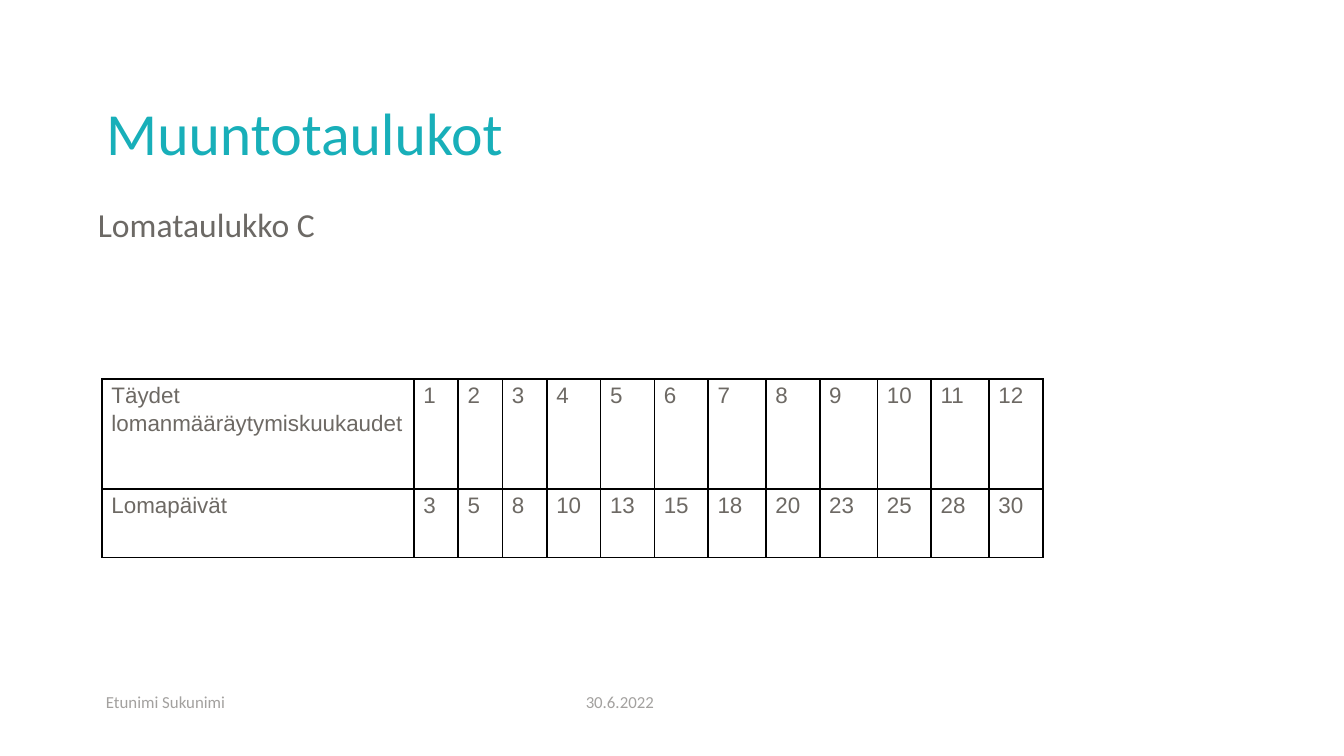
from lxml.etree import fromstring
from pptx import Presentation
from pptx.dml.color import RGBColor
from pptx.enum.text import MSO_ANCHOR, MSO_AUTO_SIZE, PP_ALIGN
from pptx.util import Inches, Pt

TEAL = RGBColor(0x18, 0xAF, 0xB9)
GREY = RGBColor(0x6C, 0x69, 0x65)
CELL = RGBColor(0x6D, 0x69, 0x64)
PALE = RGBColor(0xA3, 0xA1, 0x9F)
NS = "http://schemas.openxmlformats.org/drawingml/2006/main"


def write(frame, text, size, color, font="Calibri"):
    """Fill a frame with one left-aligned paragraph and return it."""
    frame.text = text
    frame.word_wrap = True
    para = frame.paragraphs[0]
    para.alignment = PP_ALIGN.LEFT
    run = para.runs[0].font
    run.name, run.size, run.color.rgb = font, Pt(size), color
    return para


def add_edges(cell):
    """Draw a thin black line on all four sides of a cell."""
    props = cell._tc.get_or_add_tcPr()
    for i, tag in enumerate(("lnL", "lnR", "lnT", "lnB")):
        props.insert(i, fromstring(
            f'<a:{tag} xmlns:a="{NS}" w="12700"><a:solidFill>'
            f'<a:srgbClr val="000000"/></a:solidFill></a:{tag}>'))


deck = Presentation()
deck.slide_width = Inches(10)
deck.slide_height = Inches(10 * 9 / 16)
slide = deck.slides.add_slide(deck.slide_layouts[5])

# Title and subtitle
title = slide.shapes.title
title.left, title.top = Inches(0.69), Inches(0.3)
title.width, title.height = Inches(8.62), Inches(1)
write(title.text_frame, "Muuntotaulukot", 32, TEAL).line_spacing = 0.9
title.text_frame.vertical_anchor = MSO_ANCHOR.BOTTOM
title.text_frame.auto_size = MSO_AUTO_SIZE.NONE

body = slide.shapes.add_textbox(Inches(0.63), Inches(1.5), Inches(8.62), Inches(3.35))
write(body.text_frame, "Lomataulukko C", 18, GREY).line_spacing = 0.9

# Footer
for text, left, width in (("30.6.2022", 4.26, 2.25), ("Etunimi Sukunimi", 0.69, 3.38)):
    foot = slide.shapes.add_textbox(Inches(left), Inches(5.07), Inches(width), Inches(0.3))
    write(foot.text_frame, text, 9, PALE)
    foot.text_frame.vertical_anchor = MSO_ANCHOR.MIDDLE

# Holiday table
rows = (
    ["Täydet lomanmääräytymiskuukaudet", *range(1, 13)],
    ["Lomapäivät", 3, 5, 8, 10, 13, 15, 18, 20, 23, 25, 28, 30],
)
widths = [2.32] + [0.33] * 3 + [0.4] * 3 + [0.43, 0.4] * 3
heights = (0.82, 0.51)
table = slide.shapes.add_table(
    len(rows), len(widths), Inches(0.76), Inches(2.82),
    Inches(sum(widths)), Inches(sum(heights))).table
table.first_row = table.horz_banding = False
for col, width in zip(table.columns, widths):
    col.width = Inches(width)
for row, height, values in zip(table.rows, heights, rows):
    row.height = Inches(height)
    for cell, value in zip(row.cells, values):
        para = write(cell.text_frame, str(value), 12, CELL, "Arial")
        para.line_spacing, para.space_after = 1.15, Pt(10)
        cell.margin_left = cell.margin_right = Inches(0.07)
        cell.margin_top = cell.margin_bottom = 0
        cell.fill.background()
        add_edges(cell)

deck.save("out.pptx")
